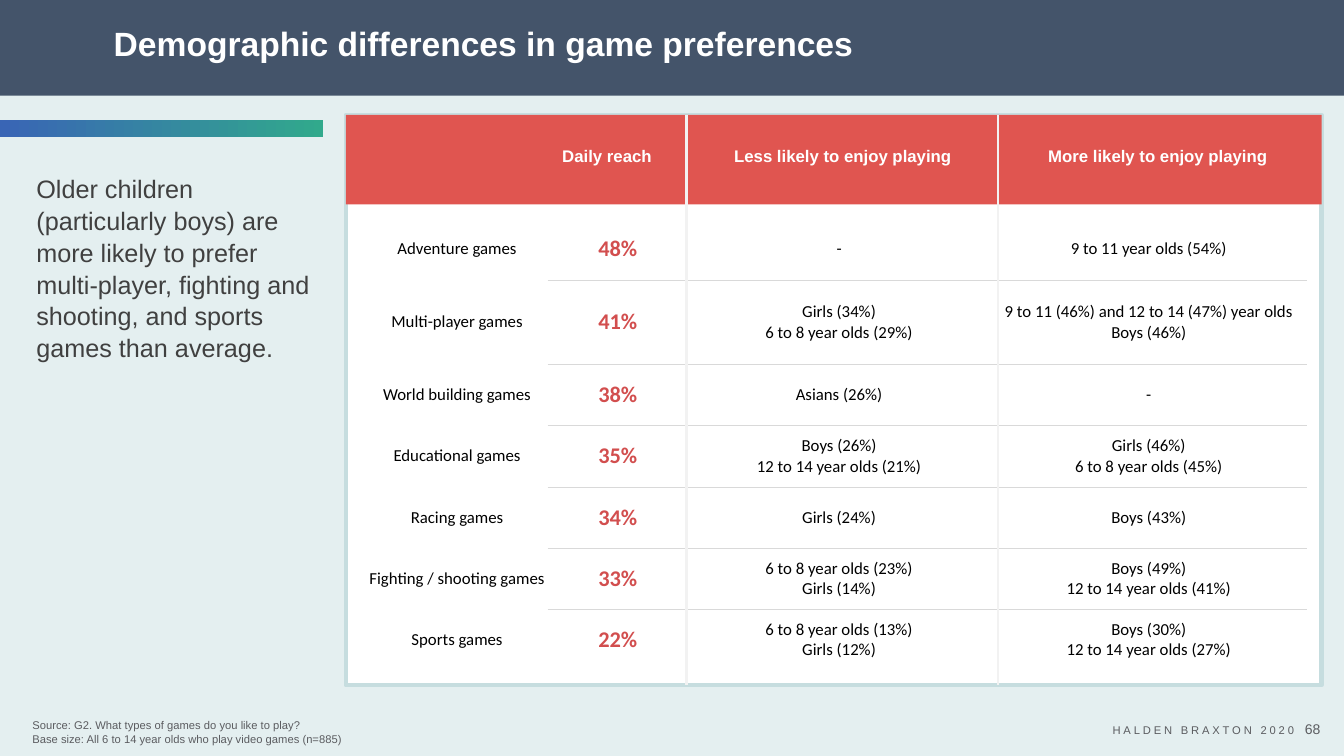
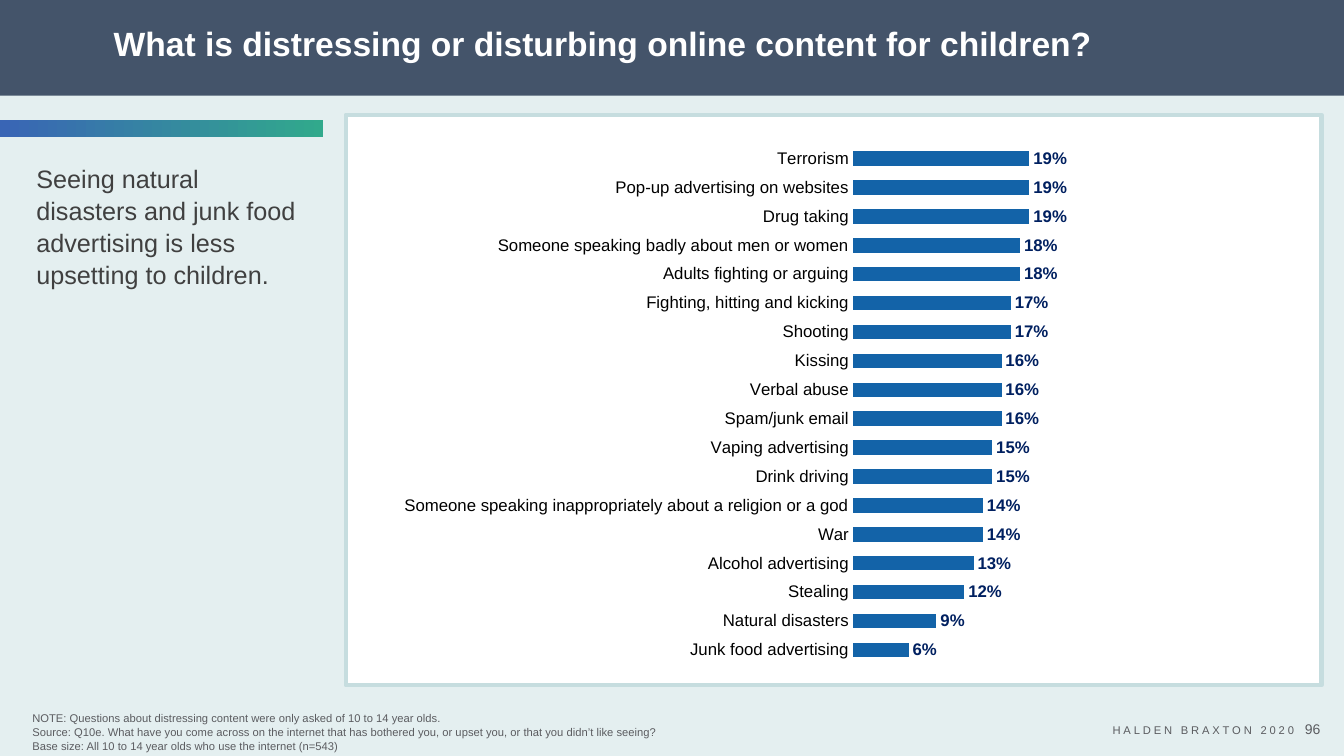
from dataclasses import dataclass
from typing import NamedTuple

from lxml import etree
from pptx import Presentation
from pptx.chart.data import CategoryChartData
from pptx.dml.color import RGBColor
from pptx.enum import chart as ch, shapes, text
from pptx.oxml import ns, parse_xml
from pptx.util import Pt


class Box(NamedTuple):
    x: float
    y: float
    w: float
    h: float

    def pts(self):
        return [Pt(v) for v in self]


@dataclass(frozen=True)
class Theme:
    page: str = "E4EFF0"
    band: str = "44546A"
    white: str = "FFFFFF"
    black: str = "000000"
    frame: str = "C6DDDF"
    header: str = "E05550"
    reach: str = "D24E4E"
    body: str = "404040"
    small: str = "5B5C60"
    rule: str = "D9D9D9"
    divider: str = "F2F2F2"
    bar: str = "1363A8"
    value: str = "002060"
    accent_from: str = "3965B5"
    accent_to: str = "31A98C"
    font: str = "Arial"
    table_font: str = "Calibri"
    title_size: int = 24
    lead_size: int = 18
    reach_size: int = 16
    label_size: int = 12
    page_size: int = 10
    note_size: int = 8


T = Theme()
LEFT, CENTER, RIGHT = text.PP_ALIGN.LEFT, text.PP_ALIGN.CENTER, text.PP_ALIGN.RIGHT
TOP, MIDDLE = text.MSO_ANCHOR.TOP, text.MSO_ANCHOR.MIDDLE
PLAIN_TABLE = "{2D5ABB26-0587-4C30-8999-92F81FD0307C}"

PANEL = Box(247, 82, 697, 407.5)
GAMES = [
    ("Adventure games", "48%", "-", "9 to 11 year olds (54%)"),
    ("Multi-player games", "41%", "Girls (34%)\n6 to 8 year olds (29%)",
     "9 to 11 (46%) and 12 to 14 (47%) year olds\nBoys (46%)"),
    ("World building games", "38%", "Asians (26%)", "-"),
    ("Educational games", "35%", "Boys (26%)\n12 to 14 year olds (21%)",
     "Girls (46%)\n6 to 8 year olds (45%)"),
    ("Racing games", "34%", "Girls (24%)", "Boys (43%)"),
    ("Fighting / shooting games", "33%", "6 to 8 year olds (23%)\nGirls (14%)",
     "Boys (49%)\n12 to 14 year olds (41%)"),
    ("Sports games", "22%", "6 to 8 year olds (13%)\nGirls (12%)",
     "Boys (30%)\n12 to 14 year olds (27%)"),
]
DISTRESSING = [
    ("Terrorism", 0.19),
    ("Pop-up advertising on websites", 0.19),
    ("Drug taking", 0.19),
    ("Someone speaking badly about men or women", 0.18),
    ("Adults fighting or arguing", 0.18),
    ("Fighting, hitting and kicking", 0.17),
    ("Shooting", 0.17),
    ("Kissing", 0.16),
    ("Verbal abuse", 0.16),
    ("Spam/junk email", 0.16),
    ("Vaping advertising", 0.15),
    ("Drink driving", 0.15),
    ("Someone speaking inappropriately about a religion or a god", 0.14),
    ("War", 0.14),
    ("Alcohol advertising", 0.13),
    ("Stealing", 0.12),
    ("Natural disasters", 0.09),
    ("Junk food advertising", 0.06),
]


def rgb(color):
    return RGBColor.from_string(color)


def set_font(font, size, color, bold=False, name=T.font):
    font.name, font.size, font.bold = name, Pt(size), bold
    font.color.rgb = rgb(color)


def write(tf, content, size, color, bold=False, name=T.font, align=LEFT, spacing=None):
    tf.text = content
    for p in tf.paragraphs:
        p.alignment = align
        if spacing:
            p.line_spacing = spacing
        set_font(p.font, size, color, bold, name)


def add_text(s, box, content, size, color, align=LEFT, anchor=TOP, spacing=None):
    sp = s.shapes.add_textbox(*box.pts())
    tf = sp.text_frame
    tf.word_wrap = True
    tf.vertical_anchor = anchor
    write(tf, content, size, color, align=align, spacing=spacing)
    return sp


def add_rect(s, box, fill, line=None):
    sp = s.shapes.add_shape(shapes.MSO_SHAPE.RECTANGLE, *box.pts())
    sp.shadow.inherit = False
    sp.fill.solid()
    sp.fill.fore_color.rgb = rgb(fill)
    if line:
        sp.line.color.rgb = rgb(line)
        sp.line.width = Pt(3)
    else:
        sp.line.fill.background()
    return sp


def add_divider(s, x, top, bottom):
    line = s.shapes.add_connector(shapes.MSO_CONNECTOR.STRAIGHT, Pt(x), Pt(top), Pt(x), Pt(bottom))
    line.line.color.rgb = rgb(T.divider)
    line.line.width = Pt(2)
    etree.SubElement(line.element.spPr, ns.qn("a:effectLst"))


def set_border(cell, side, color, width):
    tc_pr = cell._tc.get_or_add_tcPr()
    ln = parse_xml(
        f'<a:ln{side} {ns.nsdecls("a")} w="{Pt(width)}"><a:solidFill>'
        f'<a:srgbClr val="{color}"/></a:solidFill></a:ln{side}>')
    tc_pr.insert(len(tc_pr.findall("*")) - 1, ln)


def add_grid(s, x, y, widths, heights):
    box = Box(x, y, sum(widths), sum(heights))
    table = s.shapes.add_table(len(heights), len(widths), *box.pts()).table
    table.first_row = table.horz_banding = False
    table._tbl.tblPr.find(ns.qn("a:tableStyleId")).text = PLAIN_TABLE
    for column, width in zip(table.columns, widths):
        column.width = Pt(width)
    for row, height in zip(table.rows, heights):
        row.height = Pt(height)
    for cell in table.iter_cells():
        cell.fill.background()
        cell.vertical_anchor = MIDDLE
        cell.margin_left = cell.margin_right = cell.margin_top = cell.margin_bottom = 0
    return table


def add_games_table(s, box):
    add_rect(s, box, T.white, T.frame)
    add_rect(s, Box(box.x, box.y, box.w, 64), T.header)
    heights = [60.5 if i == 1 else 43.7 for i in range(len(GAMES))]
    table = add_grid(s, box.x + 12.2, box.y + 74.2, [134.6, 95, 221.2, 221.2], heights)
    last = len(GAMES) - 1
    for i, row in enumerate(GAMES):
        for j, content in enumerate(row):
            cell = table.cell(i, j)
            is_reach = j == 1
            write(cell.text_frame, content, T.reach_size if is_reach else T.label_size,
                  T.reach if is_reach else T.black, is_reach, T.table_font, CENTER)
            if j == 0:
                set_border(cell, "R", T.white, 6)
                continue
            for side in "LR":
                set_border(cell, side, T.white, 6)
            for side, edge in (("T", 0), ("B", last)):
                set_border(cell, side, *((T.white, 0.75) if i == edge else (T.rule, 0.5)))
    for offset in (243.3, 465.8):
        add_divider(s, box.x + offset, box.y, box.y + box.h)
    header = add_grid(s, box.x + 129, box.y + 10.2, [115.2, 221.8, 228.2], [39.6])
    labels = ("Daily reach", "Less likely to enjoy playing", "More likely to enjoy playing")
    for cell, label in zip(header.iter_cells(), labels):
        write(cell.text_frame, label, T.label_size, T.white, True, align=CENTER)


def place_plot(chart, x, y, w, h):
    area = chart._chartSpace.chart.plotArea
    for old in area.findall(ns.qn("c:layout")):
        area.remove(old)
    settings = (("layoutTarget", "inner"), ("xMode", "edge"), ("yMode", "edge"),
                ("x", x), ("y", y), ("w", w), ("h", h))
    parts = "".join(f'<c:{tag} val="{val}"/>' for tag, val in settings)
    area.insert(0, parse_xml(
        f'<c:layout {ns.nsdecls("c")}><c:manualLayout>{parts}</c:manualLayout></c:layout>'))


def add_distress_chart(s, box):
    add_rect(s, box, T.white, T.frame)
    data = CategoryChartData(number_format="0%")
    data.categories = [name for name, _ in DISTRESSING]
    data.add_series("Series 1", [value for _, value in DISTRESSING])
    area = Box(box.x - 3, box.y + 0.8, 664, 404)
    chart = s.shapes.add_chart(ch.XL_CHART_TYPE.BAR_CLUSTERED, *area.pts(), data).chart
    chart.has_legend = chart.has_title = False
    set_font(chart.font, T.page_size, T.black)
    place_plot(chart, 0.55, 0.05, 0.35, 0.92)

    axis = chart.category_axis
    axis.reverse_order = True
    axis.major_tick_mark = axis.minor_tick_mark = ch.XL_TICK_MARK.NONE
    axis.format.line.fill.background()
    set_font(axis.tick_labels.font, T.label_size, T.black)
    values = chart.value_axis
    values.minimum_scale, values.maximum_scale = 0, 0.35
    values.has_major_gridlines = values.visible = False

    plot = chart.plots[0]
    plot.gap_width = 100
    plot.vary_by_categories = False
    fill = plot.series[0].format.fill
    fill.solid()
    fill.fore_color.rgb = rgb(T.bar)
    plot.has_data_labels = True
    labels = plot.data_labels
    labels.show_value = True
    labels.number_format, labels.number_format_is_linked = "0%", False
    labels.position = ch.XL_LABEL_POSITION.OUTSIDE_END
    set_font(labels.font, T.label_size, T.value, True)


def build_layout(prs):
    layout = prs.slide_layouts[5]
    layout.background.fill.solid()
    layout.background.fill.fore_color.rgb = rgb(T.page)
    for ph in list(layout.placeholders):
        if ph.placeholder_format.type != shapes.PP_PLACEHOLDER.TITLE:
            ph.element.getparent().remove(ph.element)
    return layout


def move_to_layout(s, layout):
    band = add_rect(s, Box(0, 0, 960, 68.4), T.band)
    accent = add_rect(s, Box(0, 86, 231, 12), T.accent_from)
    accent.fill.gradient()
    accent.fill.gradient_angle = 0
    for stop, color in zip(accent.fill.gradient_stops, (T.accent_from, T.accent_to)):
        stop.color.rgb = rgb(color)
        stop.position = float(color == T.accent_to)
    brand = add_text(s, Box(770.4, 507.6, 161.3, 28), "HALDEN BRAXTON 2020", T.note_size,
                     T.small, RIGHT, MIDDLE)
    brand.text_frame.paragraphs[0].runs[0]._r.get_or_add_rPr().set("spc", "200")
    for i, sp in enumerate((band, accent, brand)):
        layout.shapes.element.insert(2 + i, sp.element)


def add_page(prs, layout, title, lead, lead_box, notes, number):
    s = prs.slides.add_slide(layout)
    if len(prs.slides) == 1:
        move_to_layout(s, layout)
    ph = s.shapes.title
    ph.left, ph.top, ph.width, ph.height = Box(74, 10.8, 724, 43.2).pts()
    ph.text_frame.vertical_anchor = MIDDLE
    write(ph.text_frame, title, T.title_size, T.white, True, spacing=0.9)
    sp = add_text(s, lead_box, lead, T.lead_size, T.body, spacing=1.05)
    sp.text_frame.margin_left = Pt(10)
    add_text(s, Box(16, 505.4, 597, 34.6), notes, T.note_size, T.small, anchor=MIDDLE, spacing=1.05)
    add_text(s, Box(917.3, 511.2, 33, 19.4), number, T.page_size, T.small, RIGHT)
    return s


def main():
    prs = Presentation()
    prs.slide_width, prs.slide_height = Pt(960), Pt(540)
    layout = build_layout(prs)
    s = add_page(
        prs, layout, "Demographic differences in game preferences",
        "Older children (particularly boys) are more likely to prefer multi-player, fighting and "
        "shooting, and sports games than average.", Box(16, 119.4, 222.5, 158),
        "Source: G2. What types of games do you like to play?\n"
        "Base size: All 6 to 14 year olds who play video games (n=885)", "68")
    add_games_table(s, PANEL)
    s = add_page(
        prs, layout, "What is distressing or disturbing online content for children?",
        "Seeing natural disasters and junk food advertising is less upsetting to children.",
        Box(16, 112.3, 208, 310),
        "NOTE: Questions about distressing content were only asked of 10 to 14 year olds.\n"
        "Source: Q10e. What have you come across on the internet that has bothered you, or upset you, "
        "or that you didn’t like seeing?\n"
        "Base size: All 10 to 14 year olds who use the internet (n=543)", "96")
    add_distress_chart(s, PANEL)
    prs.save("out.pptx")


if __name__ == "__main__":
    main()
